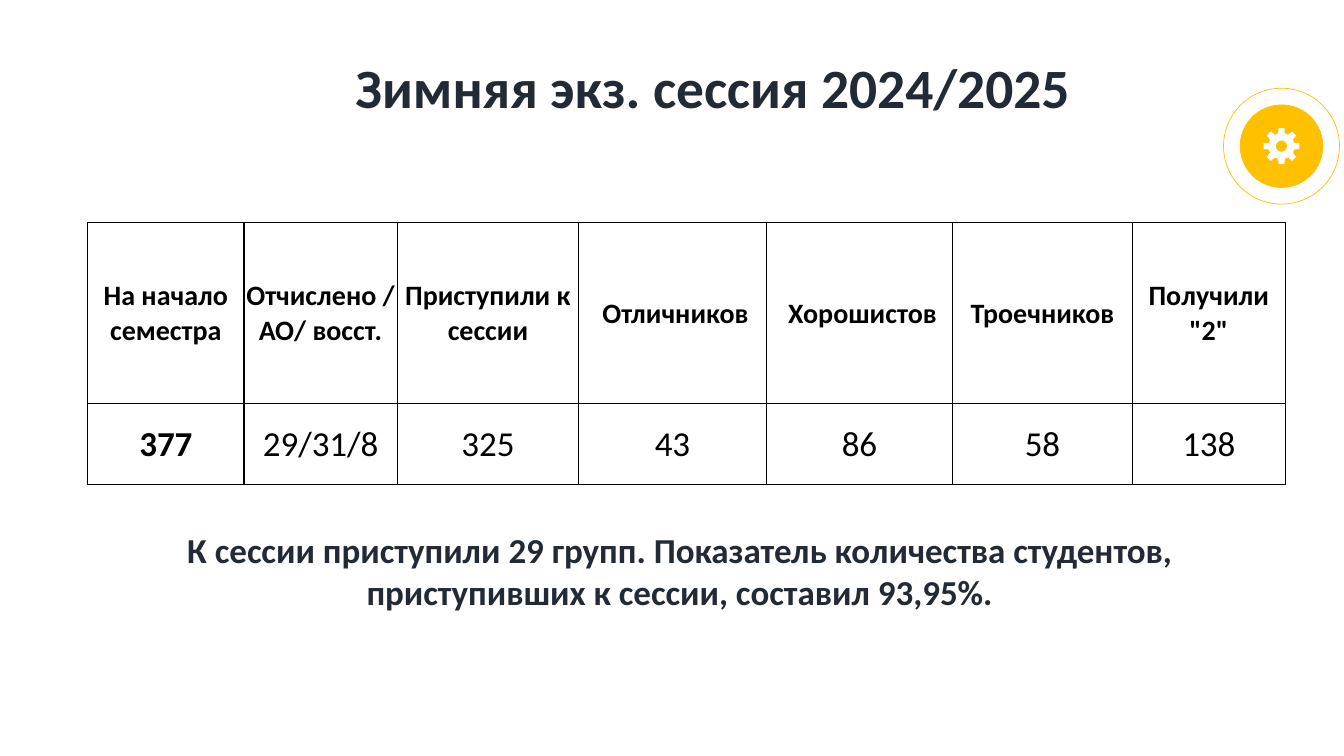
"""Builds the slide with the results of the winter exam session."""
from math import cos, radians, sin

from lxml import etree
from pptx import Presentation
from pptx.dml.color import RGBColor
from pptx.enum.shapes import MSO_SHAPE
from pptx.enum.text import MSO_ANCHOR, PP_ALIGN
from pptx.oxml.ns import qn
from pptx.util import Inches, Pt

OVAL = MSO_SHAPE.OVAL
MIDDLE = MSO_ANCHOR.MIDDLE
CENTER = PP_ALIGN.CENTER
DARK, BLACK, WHITE, GOLD = "222A35", "000000", "FFFFFF", "FFC000"


def color(code):
    return RGBColor.from_string(code)


def write(frame, text, size, code, bold=True):
    frame.word_wrap = True
    para = frame.paragraphs[0]
    para.text = text
    para.alignment = CENTER
    form = {"name": "Calibri", "size": Pt(size), "bold": bold}
    for key, value in form.items():
        setattr(para.font, key, value)
    para.font.color.rgb = color(code)
    return para


deck = Presentation()
deck.slide_width, deck.slide_height = Inches(13.33), Inches(7.5)
slide = deck.slides.add_slide(deck.slide_layouts[5])
shapes = slide.shapes

title = shapes.title
place = {"left": 2.09, "top": 0.53, "width": 9.96, "height": 0.74}
for key, value in place.items():
    setattr(title, key, Inches(value))
title.text_frame.vertical_anchor = MIDDLE
write(title.text_frame, "Зимняя экз. сессия 2024/2025", 39.6, DARK).line_spacing = 0.9

mid_x, mid_y = 12.71, 1.45
for size, code in [(1.15, WHITE), (0.82, GOLD)]:
    disc = shapes.add_shape(OVAL, Inches(mid_x - size / 2), Inches(mid_y - size / 2),
                            Inches(size), Inches(size))
    disc.shadow.inherit = False
    disc.fill.solid()
    disc.fill.fore_color.rgb = color(code)
    disc.line.color.rgb = color(GOLD)
    disc.line.width = Pt(0.5)

tooth = [(-15, 0.13), (-9, 0.18), (9, 0.18), (15, 0.13)]
rim = [(45 * turn + angle, reach) for turn in range(8) for angle, reach in tooth]
hole = [(-10 * step, 0.055) for step in range(36)]
rings = [[(Inches(mid_x + reach * cos(radians(angle))),
           Inches(mid_y + reach * sin(radians(angle)))) for angle, reach in ring]
         for ring in (rim, hole)]
path = shapes.build_freeform(*rings[0][0])
path.add_line_segments(rings[0][1:])
path.move_to(*rings[1][0])
path.add_line_segments(rings[1][1:])
gear = path.convert_to_shape()
gear.shadow.inherit = False
gear.fill.solid()
gear.fill.fore_color.rgb = color(WHITE)
gear.line.fill.background()

note = shapes.add_textbox(Inches(0.75), Inches(5.19), Inches(11.98), Inches(0.94))
write(note.text_frame, "К сессии приступили 29 групп. Показатель количества студентов, "
      "приступивших к сессии, составил 93,95%.", 25, DARK)

rows = [
    ["На начало семестра", "Отчислено /АО/ восст.", "Приступили к сессии",
     "Отличников", "Хорошистов", "Троечников", 'Получили "2"'],
    ["377", "29/31/8", "325", "43", "86", "58", "138"],
]
widths = [1.55, 1.52, 1.8, 1.86, 1.85, 1.78, 1.52]
heights = [1.79, 0.81]
table = shapes.add_table(2, 7, Inches(0.87), Inches(2.21),
                         Inches(sum(widths)), Inches(sum(heights))).table
table.first_row = table.horz_banding = False
for col, width in zip(table.columns, widths):
    col.width = Inches(width)
for row, height in zip(table.rows, heights):
    row.height = Inches(height)

for r, row in enumerate(rows):
    for c, text in enumerate(row):
        cell = table.cell(r, c)
        pad = 0.07 if r == 0 and c in (3, 4) else 0.01
        form = {"margin_left": Inches(pad), "margin_right": Inches(0.01),
                "margin_top": Inches(0.01), "margin_bottom": 0,
                "vertical_anchor": MIDDLE}
        for key, value in form.items():
            setattr(cell, key, value)
        props = cell._tc.get_or_add_tcPr()
        for side in ("lnL", "lnR", "lnT", "lnB"):
            edge = etree.SubElement(props, qn("a:" + side), w=str(Pt(1)))
            fill = etree.SubElement(edge, qn("a:solidFill"))
            etree.SubElement(fill, qn("a:srgbClr"), val=BLACK)
        cell.fill.background()
        write(cell.text_frame, text, 25 if r else 20, BLACK, r == 0 or c == 0)

deck.save("out.pptx")
